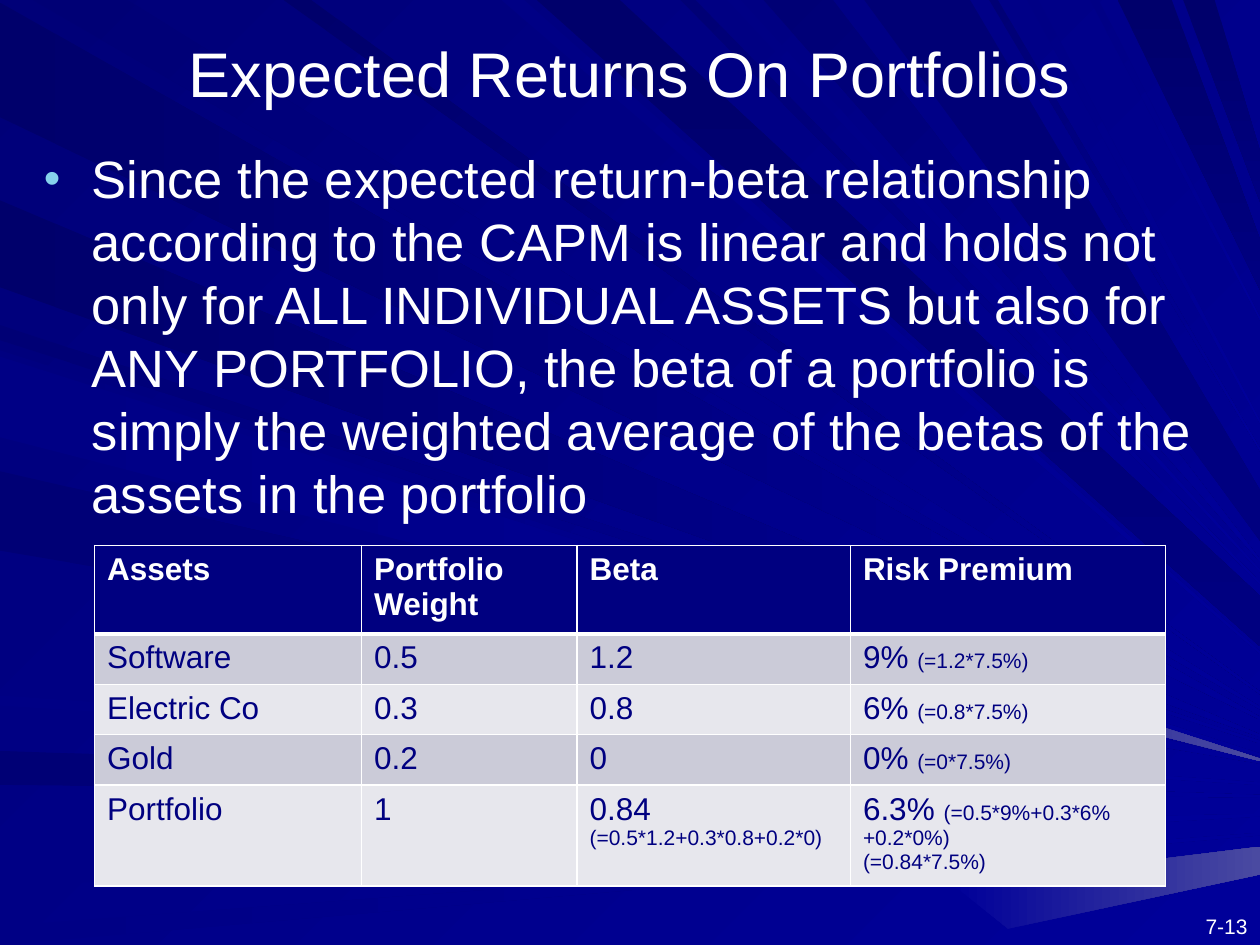
from lxml.etree import SubElement
from pptx import Presentation
from pptx.dml.color import RGBColor
from pptx.enum.text import MSO_ANCHOR, PP_ALIGN
from pptx.oxml.ns import qn
from pptx.util import Inches, Pt

COLORS = {
    "text": "FFFFFF", "border": "FFFFFF", "bullet": "86D1EC",
    "header": "000080", "cell_text": "000080",
    "band_dark": "CBCBD8", "band_light": "E7E7ED",
    "sky_dark": "000078", "sky_light": "000099",
    "ray_dark": "00006B", "ray_deep": "000075", "ray_soft": "000085",
    "ray_mid": "000080", "ray_light": "000099", "haze": "4A4AA1",
}

# Rays from one edge to the right edge: base start, base end, tip height, first colour
LEFT_RAYS = [
    (0.02, 0.93, 5.7, "ray_dark"), (5.96, 6.23, 6.32, "ray_deep"),
    (6.65, 7.04, 6.47, "ray_soft"), (7.35, 7.5, 6.62, "ray_soft"),
    (2.58, 2.7, 5.89, "ray_deep"), (1.59, 2.28, 5.84, "ray_dark"),
    (2.78, 3.42, 5.99, "ray_mid"), (3.74, 4.37, 6.05, "ray_deep"),
    (5.52, 5.6, 6.22, "ray_soft"), (2.83, 3.47, 6.03, "ray_soft"),
]
TOP_RAYS = [
    (0.26, 1.01, 5.62, "ray_deep"), (3.98, 4.16, 5.18, "ray_soft"),
    (5.4, 5.52, 4.63, "ray_deep"), (6.06, 6.61, 4.45, "ray_deep"),
    (2.25, 2.47, 5.5, "ray_dark"), (5.77, 5.88, 4.53, "ray_soft"),
    (7.85, 7.92, 3.57, "ray_deep"), (8.15, 8.24, 3.35, "ray_soft"),
    (8.65, 8.72, 2.53, "ray_soft"),
]
WIDE_TOP_RAYS = [
    (4.26, 4.92, 4.93, "ray_dark"), (6.86, 7.7, 4.09, "ray_deep"),
    (8.87, 9.3, 2.1, "ray_dark"), (9.39, 9.64, 1.4, "ray_dark"),
]

# Each cell is a list of paragraphs: (main text, small calculation)
HEADINGS = ["Assets", "Portfolio Weight", "Beta", "Risk Premium"]
ASSETS = [
    [[("Software", "")], [("0.5", "")], [("1.2", "")], [("9% ", "(=1.2*7.5%)")]],
    [[("Electric Co", "")], [("0.3", "")], [("0.8", "")], [("6% ", "(=0.8*7.5%)")]],
    [[("Gold", "")], [("0.2", "")], [("0", "")], [("0% ", "(=0*7.5%)")]],
    [[("Portfolio", "")], [("1", "")], [("0.84 ", "(=0.5*1.2+0.3*0.8+0.2*0)")],
     [("6.3% ", "(=0.5*9%+0.3*6%+0.2*0%)"), ("", "(=0.84*7.5%)")]],
]
COLUMN_WIDTHS = [2.12, 1.71, 2.17, 2.5]
ROW_HEIGHTS = [0.58, 0.33, 0.33, 0.33, 0.67]


def rgb(color):
    return RGBColor.from_string(COLORS[color])


def apply_format(target, values):
    for name, value in values.items():
        setattr(target, name, value)


def paint(fill, first, last, angle):
    fill.gradient()
    fill.gradient_angle = (360 - angle) % 360
    for stop, color in zip(fill.gradient_stops, (first, last)):
        stop.color.rgb = rgb(color)


def add_ray(slide, base_start, base_end, tip, first, last, angle, spread=0.02):
    corners = [base_start, base_end, (10, tip - spread / 2), (10, tip + spread / 2)]
    points = [(round(x * 100), round(y * 100)) for x, y in corners]
    builder = slide.shapes.build_freeform(*points[0], scale=Inches(0.01))
    builder.add_line_segments(points[1:], close=True)
    ray = builder.convert_to_shape()
    ray.shadow.inherit = False
    ray.line.fill.background()
    paint(ray.fill, first, last, angle)


def add_background(slide):
    paint(slide.background.fill, "sky_dark", "sky_light", 45)
    for start, end, tip, color in LEFT_RAYS:
        add_ray(slide, (0, end), (0, start), tip, color, "ray_light", 0)
    for start, end, tip, color in TOP_RAYS:
        add_ray(slide, (start, 0), (end, 0), tip, color, "ray_light", 45)
    for start, end, tip, color in WIDE_TOP_RAYS:
        add_ray(slide, (start, 0), (end, 0), tip, color, "ray_mid", 90, spread=0.4)
    # Pale haze at the lower right
    add_ray(slide, (6.33, 5.11), (6.37, 4.85), 6.03, "ray_light", "haze", 0)
    add_ray(slide, (8, 7.37), (7.56, 7.02), 6.83, "ray_light", "haze", 0, spread=0.22)


def add_run(paragraph, text, size, color="text", bold=False):
    run = paragraph.add_run()
    run.text = text
    apply_format(run.font, {"name": "Arial", "size": Pt(size), "bold": bold})
    run.font.color.rgb = rgb(color)


def add_text(slide, box, text, size, frame_format, paragraph_format):
    frame = slide.shapes.add_textbox(*map(Inches, box)).text_frame
    apply_format(frame, {"word_wrap": True, **frame_format})
    paragraph = frame.paragraphs[0]
    apply_format(paragraph, paragraph_format)
    add_run(paragraph, text, size)
    return paragraph


def add_bullet(paragraph, indent):
    properties = paragraph._p.get_or_add_pPr()
    properties.set("marL", str(indent))
    properties.set("indent", str(-indent))
    color = SubElement(properties, qn("a:buClr"))
    SubElement(color, qn("a:srgbClr"), val=COLORS["bullet"])
    SubElement(properties, qn("a:buSzPct"), val="90000")
    SubElement(properties, qn("a:buFont"), typeface="Arial")
    SubElement(properties, qn("a:buChar"), char="•")


def style_cell(cell, fill, top, bottom):
    properties = cell._tc.get_or_add_tcPr()
    for side, width in {"L": 1, "R": 1, "T": top, "B": bottom}.items():
        border = SubElement(properties, qn(f"a:ln{side}"), w=str(Pt(width)))
        solid = SubElement(border, qn("a:solidFill"))
        SubElement(solid, qn("a:srgbClr"), val=COLORS["border"])
    cell.fill.solid()
    cell.fill.fore_color.rgb = rgb(fill)


def add_assets_table(slide):
    table = slide.shapes.add_table(
        len(ROW_HEIGHTS), len(COLUMN_WIDTHS), Inches(0.75), Inches(4.33),
        Inches(sum(COLUMN_WIDTHS)), Inches(sum(ROW_HEIGHTS))).table
    table.horz_banding = False
    for column, width in zip(table.columns, COLUMN_WIDTHS):
        column.width = Inches(width)
    for row, height in zip(table.rows, ROW_HEIGHTS):
        row.height = Inches(height)

    for col, heading in enumerate(HEADINGS):
        cell = table.cell(0, col)
        style_cell(cell, "header", top=1, bottom=3)
        add_run(cell.text_frame.paragraphs[0], heading, 18, bold=True)

    for row, asset in enumerate(ASSETS, start=1):
        for col, lines in enumerate(asset):
            cell = table.cell(row, col)
            style_cell(cell, "band_dark" if row % 2 else "band_light",
                       top=3 if row == 1 else 1, bottom=1)
            frame = cell.text_frame
            for index, line in enumerate(lines):
                paragraph = frame.add_paragraph() if index else frame.paragraphs[0]
                for text, size in zip(line, (18, 12)):
                    if text:
                        add_run(paragraph, text, size, "cell_text")


def main():
    presentation = Presentation()
    apply_format(presentation, {"slide_width": Inches(10), "slide_height": Inches(7.5)})
    slide = presentation.slides.add_slide(presentation.slide_layouts[6])
    add_background(slide)

    # Page number, statement and title
    add_text(slide, (9.17, 7.2, 0.83, 0.3), "7-13", 12, {}, {"alignment": PP_ALIGN.RIGHT})
    statement = add_text(
        slide, (0.25, 1.08, 9.58, 3.25),
        "Since the expected return-beta relationship according to the CAPM is linear "
        "and holds not only for ALL INDIVIDUAL ASSETS but also for ANY PORTFOLIO, "
        "the beta of a portfolio is simply the weighted average of the betas of the "
        "assets in the portfolio",
        30, {"margin_top": Inches(0.08)}, {"line_spacing": Pt(36)})
    add_bullet(statement, Inches(0.38))
    add_text(slide, (0, 0.17, 10, 0.75), "Expected Returns On Portfolios", 36,
             {"vertical_anchor": MSO_ANCHOR.BOTTOM}, {"alignment": PP_ALIGN.CENTER})

    # Assets table
    add_assets_table(slide)
    presentation.save("out.pptx")


if __name__ == "__main__":
    main()
